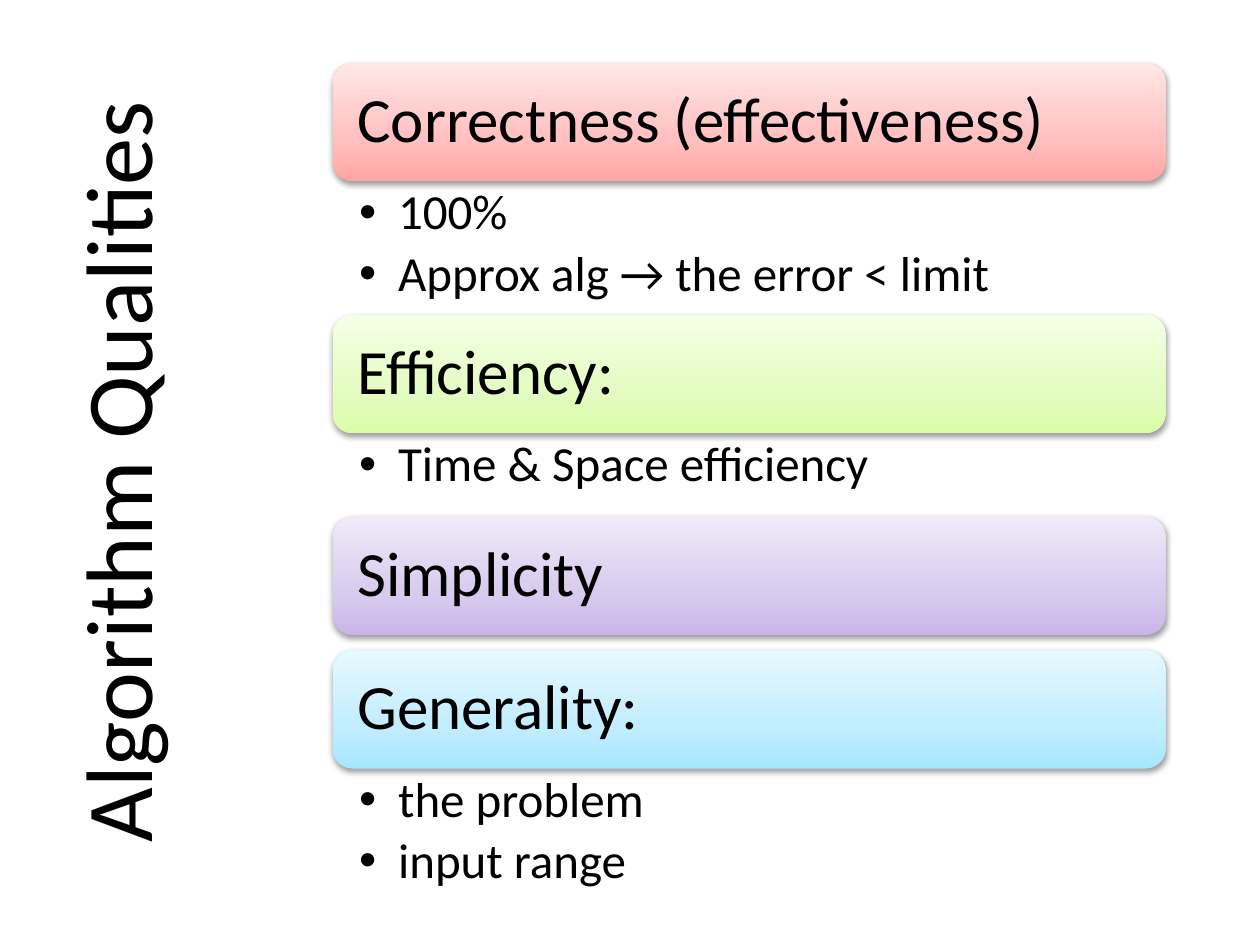
from lxml.etree import SubElement
from pptx import Presentation
from pptx.dml.color import RGBColor
from pptx.enum.shapes import MSO_SHAPE
from pptx.enum.text import MSO_ANCHOR, PP_ALIGN
from pptx.oxml.ns import qn
from pptx.util import Inches, Pt

TITLE = "Algorithm Qualities"
BLOCKS = [
    ("Correctness (effectiveness)", ["100%", "Approx alg → the error < limit"],
     ("FFA6A5", "FFC0BF", "FFE7E7"), 1.06),
    ("Efficiency:", ["Time & Space efficiency"],
     ("DAFDA7", "E4FCC2", "F5FFE7"), 0.66),
    ("Simplicity", [], ("C9B5E8", "D8CBEE", "F0EAF9"), 0.12),
    ("Generality:", ["the problem", "input range"],
     ("A7E6FF", "C1EDFF", "E7F8FF"), 1.06),
]
STOPS = (0, 35, 100)
LEFT, TOP, WIDTH, HEAD = 2.64, 0.5, 6.61, 0.94


def style(para, size, align=PP_ALIGN.LEFT):
    para.alignment = align
    para.font.name = "Calibri"
    para.font.size = Pt(size)
    para.font.color.rgb = RGBColor.from_string("000000")


def inset(frame, left, top, right, bottom):
    frame.word_wrap = True
    frame.margin_left, frame.margin_top = Inches(left), Inches(top)
    frame.margin_right, frame.margin_bottom = Inches(right), Inches(bottom)


def add(parent, tag, **attrs):
    return SubElement(parent, qn(tag), attrs)


def shade(shape, colors):
    shape.fill.gradient()
    shape.fill.gradient_angle = 90
    props = shape._element.spPr
    stops = props.find(".//" + qn("a:gsLst"))
    for old in list(stops):
        stops.remove(old)
    for pos, color in zip(STOPS, colors):
        add(add(stops, "a:gs", pos=str(pos * 1000)), "a:srgbClr", val=color)
    shape.shadow.inherit = False
    shadow = add(props.find(qn("a:effectLst")), "a:outerShdw", blurRad="40000",
                 dist="20000", dir="5400000", rotWithShape="0")
    add(add(shadow, "a:srgbClr", val="000000"), "a:alpha", val="38000")


def add_head(slide, text, colors, top):
    bar = slide.shapes.add_shape(
        MSO_SHAPE.ROUNDED_RECTANGLE,
        Inches(LEFT), Inches(top), Inches(WIDTH), Inches(HEAD))
    shade(bar, colors)
    bar.line.fill.background()
    frame = bar.text_frame
    inset(frame, 0.15, 0.15, 0.15, 0.15)
    frame.vertical_anchor = MSO_ANCHOR.MIDDLE
    para = frame.paragraphs[0]
    para.text = text
    para.line_spacing = 0.9
    style(para, 36)


def add_list(slide, items, top, height):
    box = slide.shapes.add_textbox(
        Inches(LEFT), Inches(top), Inches(WIDTH), Inches(height))
    frame = box.text_frame
    inset(frame, 0.21, 0.05, 0.28, 0.05)
    frame.text = "\n".join(items)
    for para in frame.paragraphs:
        para.level = 1
        para.line_spacing = 0.9
        para.space_after = Pt(5)
        style(para, 28)
        props = para._p.get_or_add_pPr()
        props.set("marL", str(Inches(0.31)))
        props.set("indent", str(-Inches(0.31)))
        add(props, "a:buFont", typeface="Arial")
        add(props, "a:buChar", char="•")
        props.append(props.find(qn("a:defRPr")))


def main():
    deck = Presentation()
    deck.slide_width, deck.slide_height = Inches(10), Inches(7.5)
    slide = deck.slides.add_slide(deck.slide_layouts[5])
    title = slide.shapes.title
    title.left, title.top = Inches(-2.84), Inches(3.12)
    title.width, title.height = Inches(7.5), Inches(1.25)
    title.rotation = 270
    title.text_frame.text = TITLE
    title.text_frame.vertical_anchor = MSO_ANCHOR.MIDDLE
    style(title.text_frame.paragraphs[0], 54, PP_ALIGN.CENTER)

    top = TOP
    for head, items, colors, room in BLOCKS:
        add_head(slide, head, colors, top)
        top += HEAD
        if items:
            add_list(slide, items, top, room)
        top += room
    deck.save("out.pptx")


if __name__ == "__main__":
    main()
